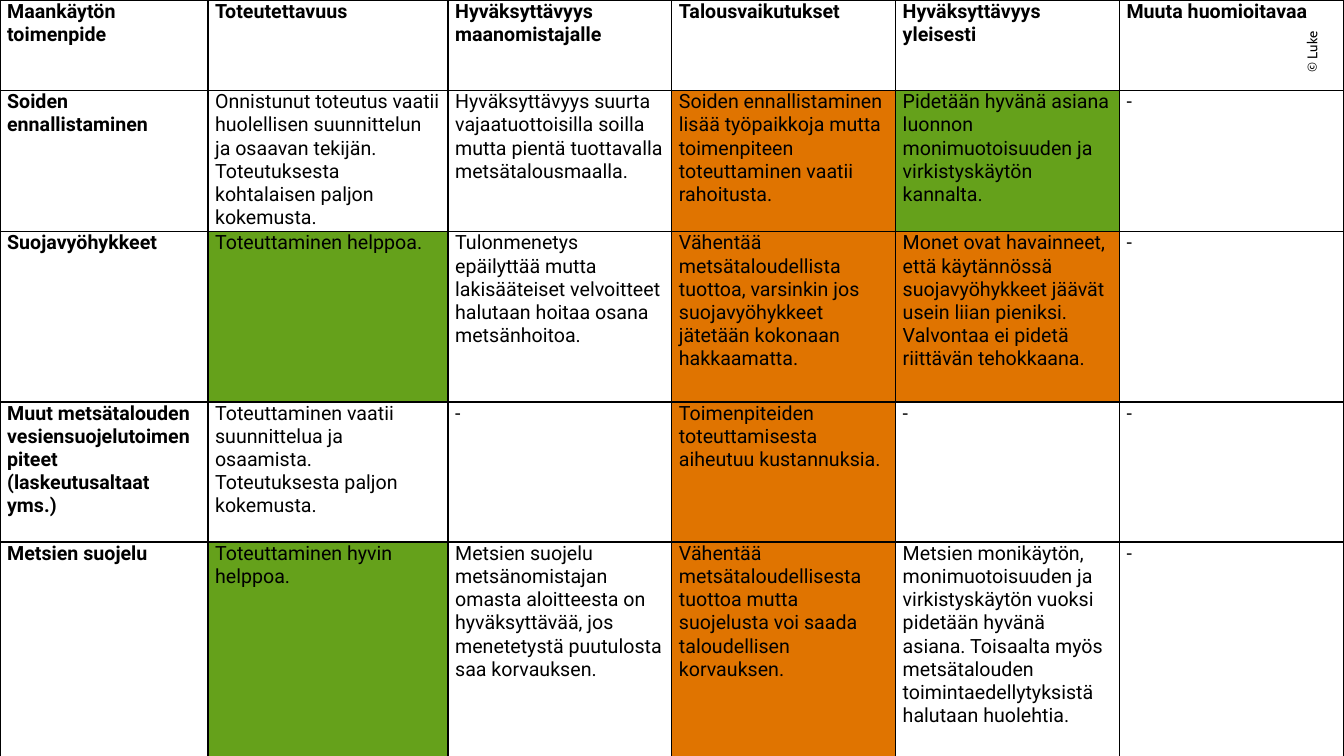
from lxml import etree
from pptx import Presentation
from pptx.dml import color
from pptx.enum import text
from pptx.oxml import ns
from pptx.util import Cm, Pt

BLACK, GREEN, ORANGE = "000000", "65A11B", "E07400"
COLUMN_WIDTHS = [5.24, 6.05] + [5.64] * 4
ROW_HEIGHTS = [2.28, 2.95, 4.29, 3.53, 6.02]

MEASURES = [
    ["Maankäytön toimenpide", "Toteutettavuus", "Hyväksyttävyys maanomistajalle",
     "Talousvaikutukset", "Hyväksyttävyys yleisesti", "Muuta huomioitavaa"],
    ["Soiden ennallistaminen",
     "Onnistunut toteutus vaatii huolellisen suunnittelun ja osaavan tekijän. "
     "Toteutuksesta kohtalaisen paljon kokemusta.",
     "Hyväksyttävyys suurta vajaatuottoisilla soilla mutta pientä tuottavalla "
     "metsätalousmaalla.",
     "Soiden ennallistaminen lisää työpaikkoja mutta toimenpiteen toteuttaminen "
     "vaatii rahoitusta.",
     "Pidetään hyvänä asiana luonnon monimuotoisuuden ja virkistyskäytön kannalta.",
     "-"],
    ["Suojavyöhykkeet",
     "Toteuttaminen helppoa.",
     "Tulonmenetys epäilyttää mutta lakisääteiset velvoitteet halutaan hoitaa "
     "osana metsänhoitoa.",
     "Vähentää metsätaloudellista tuottoa, varsinkin jos suojavyöhykkeet jätetään "
     "kokonaan hakkaamatta.",
     "Monet ovat havainneet, että käytännössä suojavyöhykkeet jäävät usein liian "
     "pieniksi. Valvontaa ei pidetä riittävän tehokkaana.",
     "-"],
    ["Muut metsätalouden vesiensuojelutoimenpiteet (laskeutusaltaat yms.)",
     "Toteuttaminen vaatii suunnittelua ja osaamista. Toteutuksesta paljon kokemusta.",
     "-",
     "Toimenpiteiden toteuttamisesta aiheutuu kustannuksia.",
     "-",
     "-"],
    ["Metsien suojelu",
     "Toteuttaminen hyvin helppoa.",
     "Metsien suojelu metsänomistajan omasta aloitteesta on hyväksyttävää, jos "
     "menetetystä puutulosta saa korvauksen.",
     "Vähentää metsätaloudellisesta tuottoa mutta suojelusta voi saada taloudellisen "
     "korvauksen.",
     "Metsien monikäytön, monimuotoisuuden ja virkistyskäytön vuoksi pidetään hyvänä "
     "asiana. Toisaalta myös metsätalouden toimintaedellytyksistä halutaan huolehtia.",
     "-"],
]

# Ratings by (row, column); the economic column is orange throughout
RATINGS = {(row, 3): ORANGE for row in range(1, 5)}
RATINGS.update({(1, 4): GREEN, (2, 1): GREEN, (2, 4): ORANGE, (4, 1): GREEN})


def rgb(value):
    return color.RGBColor.from_string(value)


def add_span(para, words, font, size, bold=False):
    span = para.add_run()
    span.text = words
    span.font.name, span.font.size, span.font.bold = font, Pt(size), bold
    span.font.color.rgb = rgb(BLACK)
    return span


def highlight(span, value):
    mark = etree.Element(ns.qn("a:highlight"))
    etree.SubElement(mark, ns.qn("a:srgbClr"), val=value)
    span.font._element.find(ns.qn("a:latin")).addprevious(mark)


def add_borders(cell):
    properties = cell._tc.get_or_add_tcPr()
    for index, side in enumerate(("lnL", "lnR", "lnT", "lnB")):
        line = etree.Element(ns.qn("a:" + side), w=str(Pt(1)))
        fill = etree.SubElement(line, ns.qn("a:solidFill"))
        etree.SubElement(fill, ns.qn("a:srgbClr"), val=BLACK)
        properties.insert(index, line)


def fill_cell(cell, words, bold, rating):
    cell.margin_left = cell.margin_right = Cm(0.18)
    cell.margin_top = cell.margin_bottom = 0
    span = add_span(cell.text_frame.paragraphs[0], words, "Roboto", 14, bold)
    if rating:
        cell.fill.solid()
        cell.fill.fore_color.rgb = rgb(rating)
        highlight(span, rating)
    else:
        cell.fill.background()
    add_borders(cell)


def add_measures(page):
    table = page.shapes.add_table(
        len(ROW_HEIGHTS), len(COLUMN_WIDTHS), 0, 0,
        Cm(sum(COLUMN_WIDTHS)), Cm(sum(ROW_HEIGHTS))).table
    table.first_row = table.horz_banding = False
    for column, width in zip(table.columns, COLUMN_WIDTHS):
        column.width = Cm(width)
    for row, height in zip(table.rows, ROW_HEIGHTS):
        row.height = Cm(height)
    for r, row in enumerate(MEASURES):
        for c, words in enumerate(row):
            fill_cell(table.cell(r, c), words, r == 0 or c == 0, RATINGS.get((r, c)))


def add_copyright(page):
    box = page.shapes.add_textbox(Cm(31.7), Cm(1.57), Cm(2.72), Cm(0.68))
    box.rotation = 270
    box.text_frame.word_wrap = True
    box.text_frame.auto_size = text.MSO_AUTO_SIZE.SHAPE_TO_FIT_TEXT
    para = box.text_frame.paragraphs[0]
    para.alignment = text.PP_ALIGN.RIGHT
    add_span(para, "© Luke", "Cabin", 10)


def main():
    deck = Presentation()
    deck.slide_width, deck.slide_height = Cm(33.87), Cm(19.05)
    page = deck.slides.add_slide(deck.slide_layouts[6])
    # The copyright line lies behind the unfilled header cell
    add_copyright(page)
    add_measures(page)
    deck.save("out.pptx")


if __name__ == "__main__":
    main()
